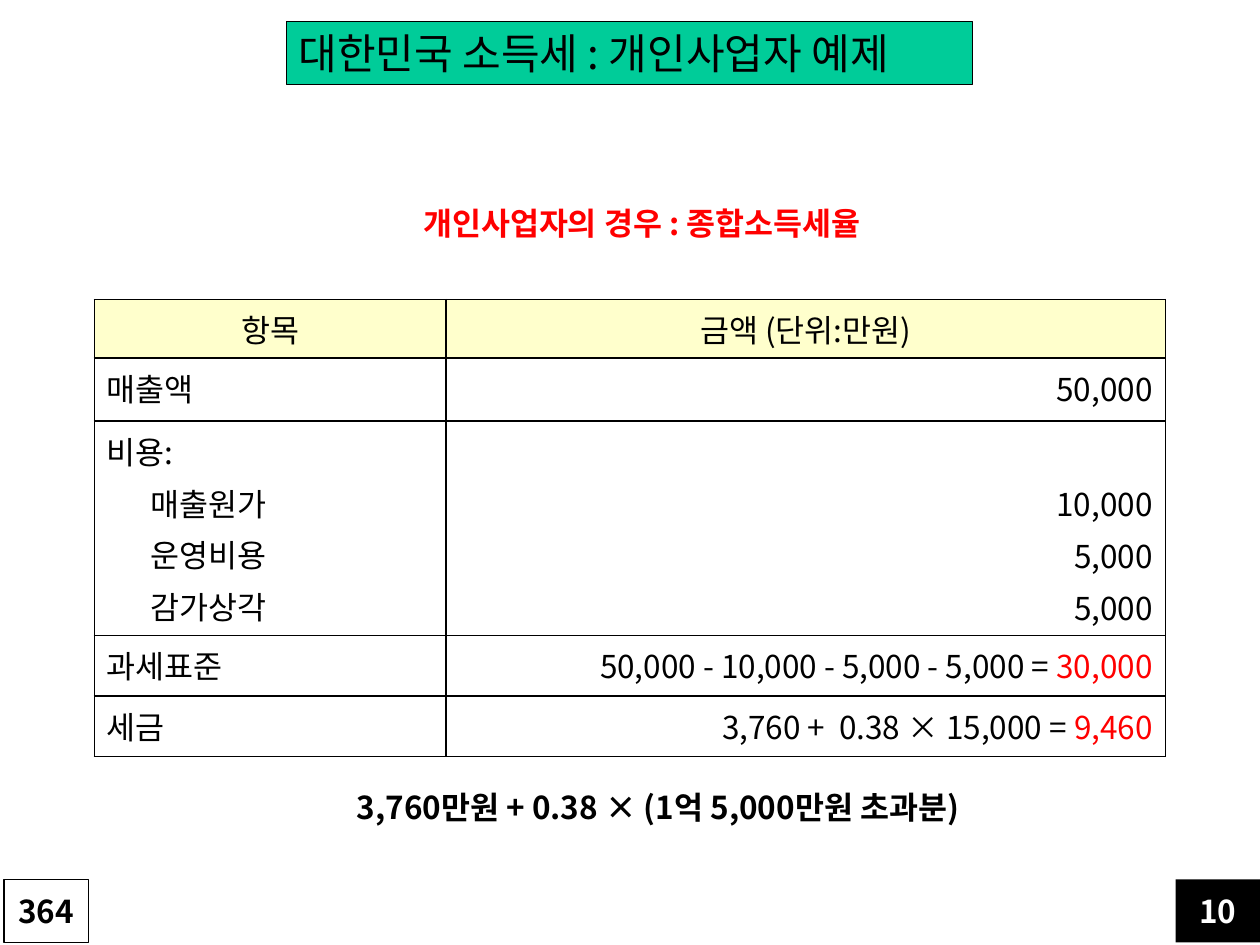
from dataclasses import dataclass
from typing import Optional

from lxml.etree import SubElement
from pptx import Presentation
from pptx.dml.color import RGBColor
from pptx.enum.shapes import MSO_SHAPE
from pptx.enum.text import MSO_ANCHOR, PP_ALIGN
from pptx.oxml.ns import qn
from pptx.util import Cm, Pt

FONT = "Noto Sans CJK KR"
BLACK, WHITE, RED = "000000", "FFFFFF", "FF0000"
GREEN, CREAM = "00CC99", "FFFFCC"
LINE_PITCH = 1.05
CELL_MARGIN = 0.13


@dataclass(frozen=True)
class Label:
    text: str
    left: float
    top: float
    width: float
    height: float
    color: str = BLACK
    size: int = 18
    bold: bool = True
    align: PP_ALIGN = PP_ALIGN.CENTER
    anchor: MSO_ANCHOR = MSO_ANCHOR.MIDDLE
    fill: Optional[str] = None
    line: Optional[str] = None


@dataclass(frozen=True)
class Line:
    text: str
    result: str = ""
    indent: float = 0


@dataclass(frozen=True)
class Row:
    height: float
    items: tuple[Line, ...]
    amounts: tuple[Line, ...]
    skipped_lines: int = 0


LABELS = (
    Label("개인사업자의 경우 : 종합소득세율", 8.28, 3.99, 10.08, 1.02, RED,
          align=PP_ALIGN.LEFT, anchor=MSO_ANCHOR.TOP),
    Label("3,760만원 + 0.38 × (1억 5,000만원 초과분) ", 6.91, 15.77, 12.85, 1.02,
          anchor=MSO_ANCHOR.TOP),
    Label("대한민국 소득세 : 개인사업자 예제", 5.77, 0.43, 13.84, 1.27, size=24,
          bold=False, align=PP_ALIGN.LEFT, anchor=MSO_ANCHOR.TOP, fill=GREEN, line=BLACK),
    Label("10", 23.7, 17.73, 1.7, 1.27, WHITE, fill=BLACK),
    Label("364", 0.08, 17.73, 1.7, 1.27, fill=WHITE, line=BLACK),
)

ROWS = (
    Row(1.09, (Line("항목"),), (Line("금액 (단위:만원)"),)),
    Row(1.27, (Line("매출액"),), (Line("50,000"),)),
    Row(4.14,
        (Line("비용:"), *(Line(cost, indent=0.88) for cost in ("매출원가", "운영비용", "감가상각"))),
        (Line("10,000"), Line("5,000"), Line("5,000")), skipped_lines=1),
    Row(1.22, (Line("과세표준"),), (Line("50,000 - 10,000 - 5,000 - 5,000 = ", "30,000"),)),
    Row(1.22, (Line("세금"),), (Line("3,760 +  0.38 × 15,000 = ", "9,460"),)),
)
COLUMN_WIDTHS = (7.09, 14.5)


def rgb(value: str) -> RGBColor:
    return RGBColor.from_string(value)


def add_run(paragraph, text: str, color: str, size: int = 18, bold: bool = False) -> None:
    run = paragraph.add_run()
    run.text = text
    run.font.name = FONT
    run.font.size = Pt(size)
    run.font.bold = bold
    run.font.color.rgb = rgb(color)
    SubElement(run.font._element, qn("a:ea"), typeface=FONT)


def add_label(slide, label: Label) -> None:
    box = tuple(Cm(value) for value in (label.left, label.top, label.width, label.height))
    if label.fill:
        shape = slide.shapes.add_shape(MSO_SHAPE.RECTANGLE, *box)
        shape.shadow.inherit = False
        shape.fill.solid()
        shape.fill.fore_color.rgb = rgb(label.fill)
        if label.line:
            shape.line.color.rgb = rgb(label.line)
            shape.line.width = Pt(0.75)
        else:
            shape.line.fill.background()
    else:
        shape = slide.shapes.add_textbox(*box)
    frame = shape.text_frame
    frame.word_wrap = True
    frame.vertical_anchor = label.anchor
    paragraph = frame.paragraphs[0]
    paragraph.alignment = label.align
    add_run(paragraph, label.text, label.color, label.size, label.bold)


def add_borders(cell) -> None:
    properties = cell._tc.get_or_add_tcPr()
    for position, side in enumerate(("lnL", "lnR", "lnT", "lnB")):
        border = properties.makeelement(qn(f"a:{side}"), {"w": str(Pt(1))})
        fill = SubElement(border, qn("a:solidFill"))
        SubElement(fill, qn("a:srgbClr"), val=BLACK)
        properties.insert(position, border)


def fill_cell(cell, lines: tuple[Line, ...], align: PP_ALIGN, fill: Optional[str],
              skipped_lines: int = 0) -> None:
    cell.margin_top = Cm(CELL_MARGIN + skipped_lines * LINE_PITCH)
    cell.margin_bottom = Cm(CELL_MARGIN)
    if fill:
        cell.fill.solid()
        cell.fill.fore_color.rgb = rgb(fill)
    else:
        cell.fill.background()
    add_borders(cell)
    frame = cell.text_frame
    for index, line in enumerate(lines):
        paragraph = frame.add_paragraph() if index else frame.paragraphs[0]
        paragraph.alignment = align
        paragraph.space_before = Pt(3.6)
        if line.indent:
            paragraph._p.get_or_add_pPr().set("marL", str(Cm(line.indent)))
        add_run(paragraph, line.text, BLACK)
        if line.result:
            add_run(paragraph, line.result, RED)


def add_tax_table(slide) -> None:
    height = sum(row.height for row in ROWS)
    table = slide.shapes.add_table(len(ROWS), len(COLUMN_WIDTHS), Cm(1.9), Cm(6.04),
                                   Cm(sum(COLUMN_WIDTHS)), Cm(height)).table
    table.first_row = False
    table.horz_banding = False
    for column, width in zip(table.columns, COLUMN_WIDTHS):
        column.width = Cm(width)
    for index, row in enumerate(ROWS):
        table.rows[index].height = Cm(row.height)
        header = index == 0
        fill = CREAM if header else None
        item_align = PP_ALIGN.CENTER if header else PP_ALIGN.LEFT
        amount_align = PP_ALIGN.CENTER if header else PP_ALIGN.RIGHT
        fill_cell(table.cell(index, 0), row.items, item_align, fill)
        fill_cell(table.cell(index, 1), row.amounts, amount_align, fill, row.skipped_lines)


def main() -> None:
    presentation = Presentation()
    presentation.slide_width = Cm(25.4)
    presentation.slide_height = Cm(19.05)
    slide = presentation.slides.add_slide(presentation.slide_layouts[6])
    add_tax_table(slide)
    for label in LABELS:
        add_label(slide, label)
    presentation.save("out.pptx")


if __name__ == "__main__":
    main()
